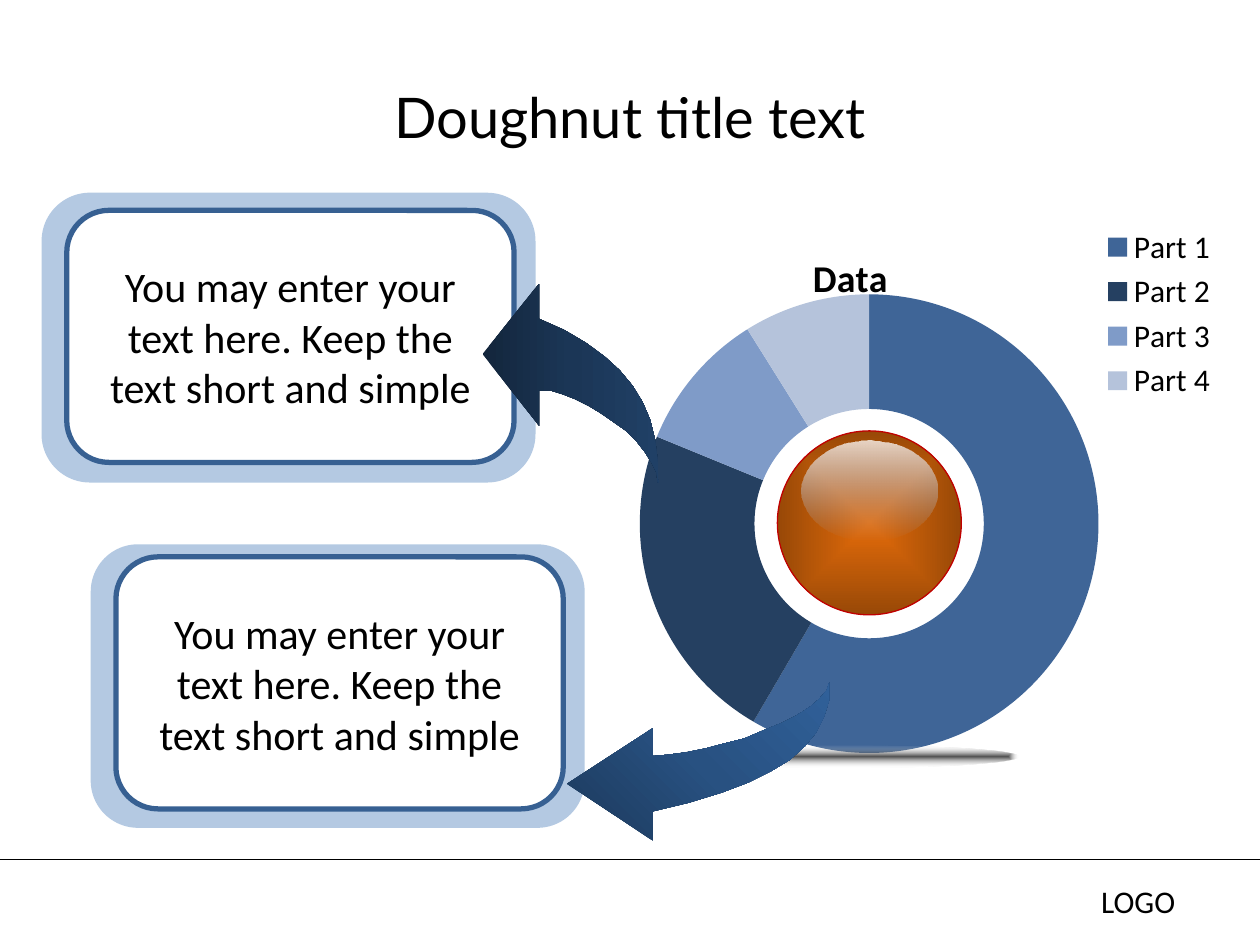
from dataclasses import dataclass
from typing import NamedTuple

from lxml import etree
from pptx import Presentation
from pptx import util as u
from pptx.chart.data import CategoryChartData
from pptx.dml.color import RGBColor
from pptx.enum import chart as charts
from pptx.enum import shapes, text
from pptx.oxml import parse_xml
from pptx.oxml.ns import nsdecls, qn


@dataclass(frozen=True)
class Theme:
    font: str = "Calibri"
    title_font: str = "Lato"
    title_size: float = 32
    body_size: float = 24
    chart_title_size: float = 21.6
    small_size: float = 18
    ink: str = "000000"
    paper: str = "FFFFFF"
    frame: str = "95B3D7"
    outline: str = "376092"
    button_line: str = "C00000"
    slices: tuple[str, ...] = ("3F6597", "254061", "7F9BC8", "B5C3DB")


class Box(NamedTuple):
    left: float
    top: float
    width: float
    height: float

    def lengths(self) -> list[u.Length]:
        return [u.Inches(value) for value in self]


class Stop(NamedTuple):
    position: int
    color: str
    alpha: int = 100


class Callout(NamedTuple):
    frame: Box
    panel: Box
    arrow: list[tuple[int, int]]  # hundredths of an inch
    stops: list[Stop]
    angle: int


THEME = Theme()
MESSAGE = "You may enter your text here. Keep the text short and simple"
CALLOUTS = [
    Callout(
        Box(0.33, 1.53, 3.92, 2.3), Box(0.53, 1.67, 3.55, 2),
        [(523, 383), (522, 365), (520, 349), (516, 333), (510, 319), (502, 306), (492, 294),
         (480, 283), (465, 272), (448, 262), (428, 253), (428, 225), (383, 281), (428, 338),
         (428, 310), (437, 310), (447, 313), (457, 317), (467, 322), (477, 328), (487, 335),
         (497, 342), (505, 350), (512, 359), (517, 367), (521, 375), (522, 383)],
        [Stop(0, "13263C"), Stop(50, "1B3656"), Stop(100, "204066")], 0),
    Callout(
        Box(0.72, 4.32, 3.92, 2.25), Box(0.92, 4.42, 3.55, 2),
        [(658, 542), (658, 556), (654, 569), (648, 581), (639, 592), (627, 603), (612, 612),
         (594, 621), (573, 629), (547, 637), (518, 644), (518, 667), (450, 622), (518, 578),
         (518, 600), (530, 599), (545, 597), (560, 594), (575, 590), (591, 586), (605, 580),
         (620, 574), (632, 568), (643, 561), (650, 555), (656, 548)],
        [Stop(0, "1C395B"), Stop(50, "285181"), Stop(100, "306099")], 315),
]


def color(value: str) -> RGBColor:
    return RGBColor.from_string(value)


def style_font(font, size: float, name: str = THEME.font, bold: bool = False) -> None:
    font.size, font.name, font.bold = u.Pt(size), name, bold
    font.color.rgb = color(THEME.ink)


def set_gradient(shape, stops: list[Stop], angle: int | None = None) -> None:
    """Fill with a linear gradient, or one from the centre when no angle is given."""
    marks = "".join(
        f'<a:gs pos="{stop.position * 1000}"><a:srgbClr val="{stop.color}">'
        f'<a:alpha val="{stop.alpha * 1000}"/></a:srgbClr></a:gs>' for stop in stops)
    if angle is None:
        direction = ('<a:path path="shape"><a:fillToRect l="50000" t="50000" '
                     'r="50000" b="50000"/></a:path>')
    else:
        direction = f'<a:lin ang="{angle * 60000}" scaled="0"/>'
    shape.fill.solid()
    solid = shape.element.spPr.find(qn("a:solidFill"))
    solid.getparent().replace(solid, parse_xml(
        f'<a:gradFill {nsdecls("a")} rotWithShape="1"><a:gsLst>{marks}</a:gsLst>'
        f'{direction}</a:gradFill>'))


def set_line(shape, line_color: str | None = None, width: float = 0.75) -> None:
    shape.shadow.inherit = False
    if line_color is None:
        shape.line.fill.background()
    else:
        shape.line.color.rgb = color(line_color)
        shape.line.width = u.Pt(width)


def set_text(shape, wording: str, size: float, name: str = THEME.font,
             align=text.PP_ALIGN.CENTER, anchor=text.MSO_ANCHOR.MIDDLE) -> None:
    frame = shape.text_frame
    frame.text = wording
    frame.word_wrap = True
    frame.vertical_anchor = anchor
    paragraph = frame.paragraphs[0]
    paragraph.alignment = align
    style_font(paragraph.runs[0].font, size, name)


def add_ellipse(slide, box: Box, stops: list[Stop], angle: int | None = None,
                line_color: str | None = None) -> None:
    shape = slide.shapes.add_shape(shapes.MSO_SHAPE.OVAL, *box.lengths())
    set_gradient(shape, stops, angle)
    set_line(shape, line_color)


def add_panel(slide, box: Box, fill: str):
    shape = slide.shapes.add_shape(shapes.MSO_SHAPE.ROUNDED_RECTANGLE, *box.lengths())
    shape.fill.solid()
    shape.fill.fore_color.rgb = color(fill)
    return shape


def add_callout(slide, callout: Callout) -> None:
    frame = add_panel(slide, callout.frame, THEME.frame)
    set_line(frame)
    fill_color = frame.element.spPr.find(qn("a:solidFill"))[0]
    etree.SubElement(fill_color, qn("a:alpha")).set("val", "70000")

    panel = add_panel(slide, callout.panel, THEME.paper)
    set_line(panel, THEME.outline, 3)
    set_text(panel, MESSAGE, THEME.body_size)

    start, *rest = callout.arrow
    builder = slide.shapes.build_freeform(*start, scale=u.Inches(0.01))
    builder.add_line_segments(rest, close=True)
    arrow = builder.convert_to_shape()
    set_gradient(arrow, callout.stops, callout.angle)
    set_line(arrow)


def set_layout(part, **fractions: float) -> None:
    """Place a chart part by fractions of the chart area."""
    for old in part.findall(qn("c:layout")):
        part.remove(old)
    target = '<c:layoutTarget val="inner"/>' if part.tag == qn("c:plotArea") else ""
    modes = "".join(f'<c:{key}Mode val="edge"/>' for key in ("x", "y"))
    sizes = "".join(f'<c:{key} val="{value}"/>' for key, value in fractions.items())
    layout = parse_xml(f'<c:layout {nsdecls("c")}><c:manualLayout>{target}{modes}{sizes}'
                       '</c:manualLayout></c:layout>')
    before = {qn("c:title"): "c:tx", qn("c:legend"): "c:legendPos"}.get(part.tag)
    part.insert(0 if before is None else part.index(part.find(qn(before))) + 1, layout)


def add_doughnut(slide, box: Box) -> None:
    data = CategoryChartData()
    data.categories = ["Part 1", "Part 2", "Part 3", "Part 4"]
    data.add_series("Series 1", [59, 23, 10, 9])
    chart = slide.shapes.add_chart(
        charts.XL_CHART_TYPE.DOUGHNUT, *box.lengths(), data).chart
    style_font(chart.font, THEME.small_size)
    chart.has_title = True
    chart.chart_title.text_frame.text = "Data"
    title_run = chart.chart_title.text_frame.paragraphs[0].runs[0]
    style_font(title_run.font, THEME.chart_title_size, bold=True)
    chart.has_legend = True
    chart.legend.position = charts.XL_LEGEND_POSITION.RIGHT
    chart.legend.include_in_layout = False

    plot = chart.plots[0]
    plot.vary_by_categories = True
    for index, slice_color in enumerate(THEME.slices):
        point = plot.series[0].points[index].format
        point.fill.solid()
        point.fill.fore_color.rgb = color(slice_color)
        point.line.fill.background()

    space = chart.element
    space.find(".//" + qn("c:holeSize")).set("val", "50")
    set_layout(space.find(".//" + qn("c:title")), x=0.46, y=0.06)
    set_layout(space.find(".//" + qn("c:plotArea")), x=0.26, y=0.15, w=0.55, h=0.82)
    set_layout(space.find(".//" + qn("c:legend")), x=0.78, y=0.02, w=0.2, h=0.33)


def main() -> None:
    presentation = Presentation()
    presentation.slide_width, presentation.slide_height = u.Inches(10), u.Inches(7.5)
    slide = presentation.slides.add_slide(presentation.slide_layouts[6])

    # Footer rule and label
    rule = slide.shapes.add_connector(
        shapes.MSO_CONNECTOR.STRAIGHT, *Box(0, 6.82, 10, 6.82).lengths())
    rule.line.color.rgb = color(THEME.ink)
    rule.line.width = u.Pt(0.75)
    etree.SubElement(rule.element.spPr, qn("a:effectLst"))
    label = slide.shapes.add_textbox(*Box(8.64, 6.95, 1.11, 0.4).lengths())
    set_text(label, "LOGO", THEME.small_size, align=text.PP_ALIGN.LEFT,
             anchor=text.MSO_ANCHOR.TOP)

    # Title
    title = slide.shapes.add_textbox(*Box(0.5, 0.3, 9, 1.25).lengths())
    set_text(title, "Doughnut title text", THEME.title_size, THEME.title_font)

    # Doughnut with its glossy button and ground shadow
    add_doughnut(slide, Box(3.33, 1.67, 6.67, 4.44))
    add_ellipse(slide, Box(6.17, 3.42, 1.46, 1.46),
                [Stop(0, "E46C0A"), Stop(100, "984807")], line_color=THEME.button_line)
    add_ellipse(slide, Box(6.36, 3.5, 1.08, 0.79),
                [Stop(0, "FFFFFF", 77), Stop(100, "8EB4E3", 0)], angle=90)
    add_ellipse(slide, Box(5.33, 5.92, 2.75, 0.17),
                [Stop(0, "171717", 76), Stop(100, "FFFFFF", 0)])

    # Callouts with curved arrows
    for callout in CALLOUTS:
        add_callout(slide, callout)

    presentation.save("out.pptx")


if __name__ == "__main__":
    main()
